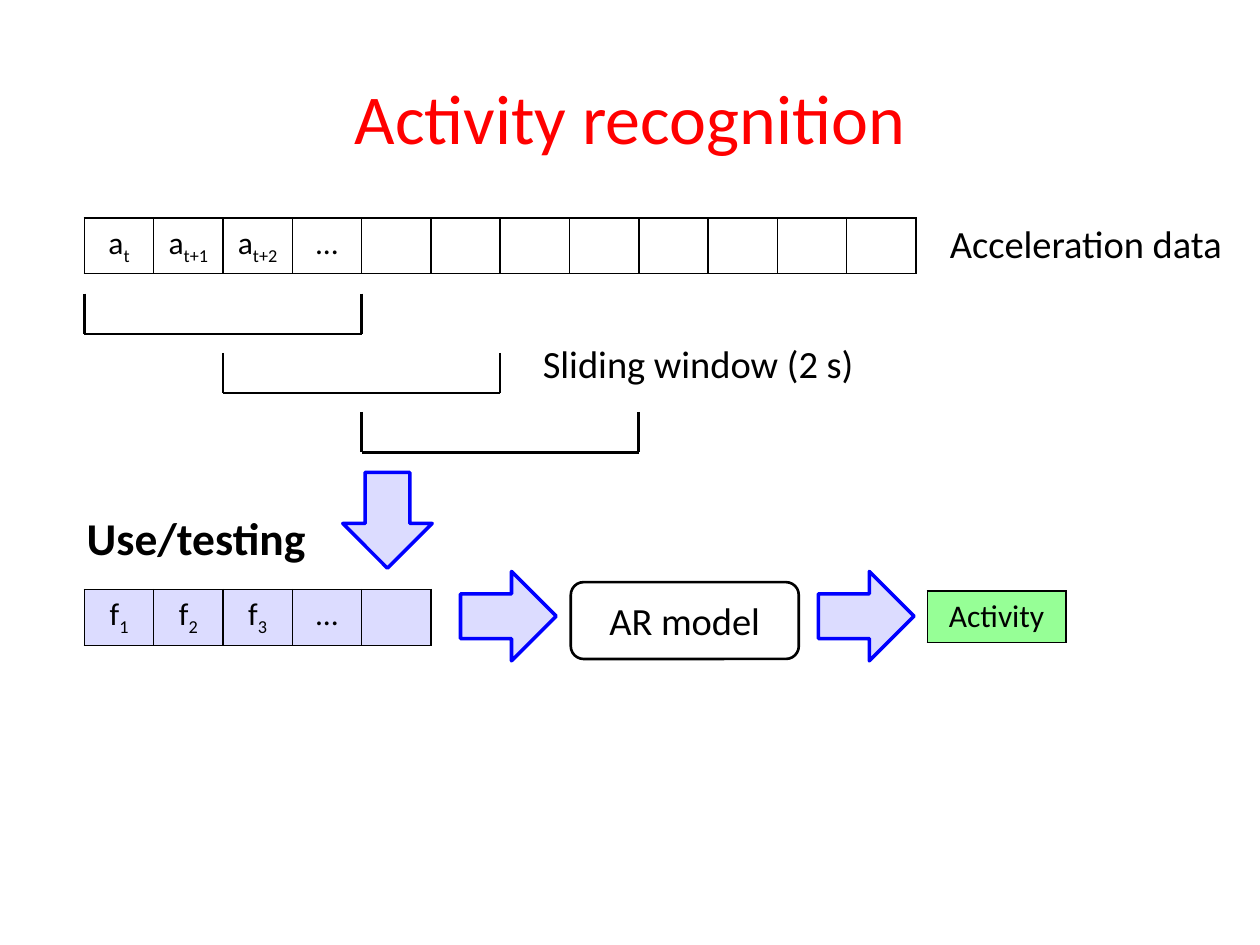
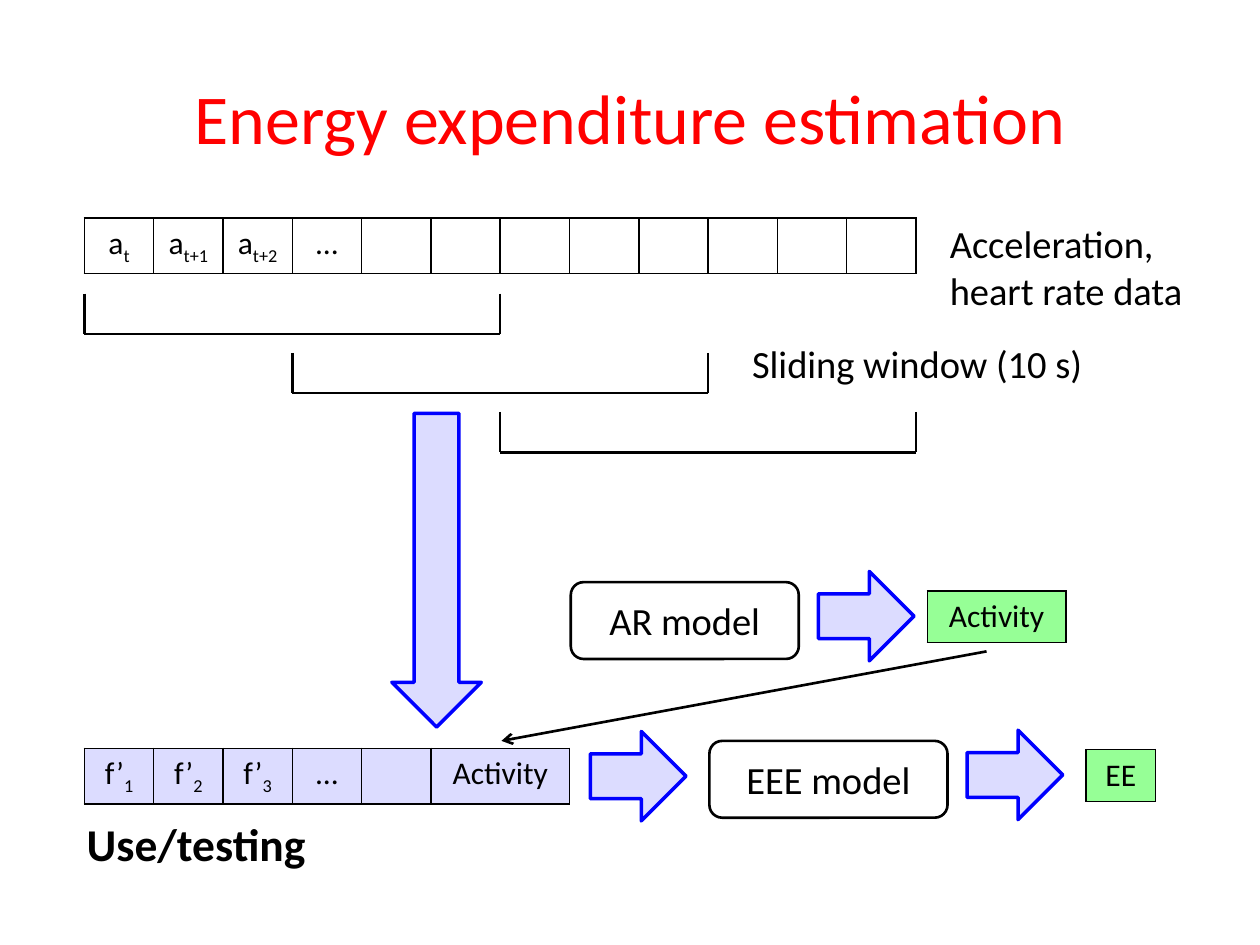
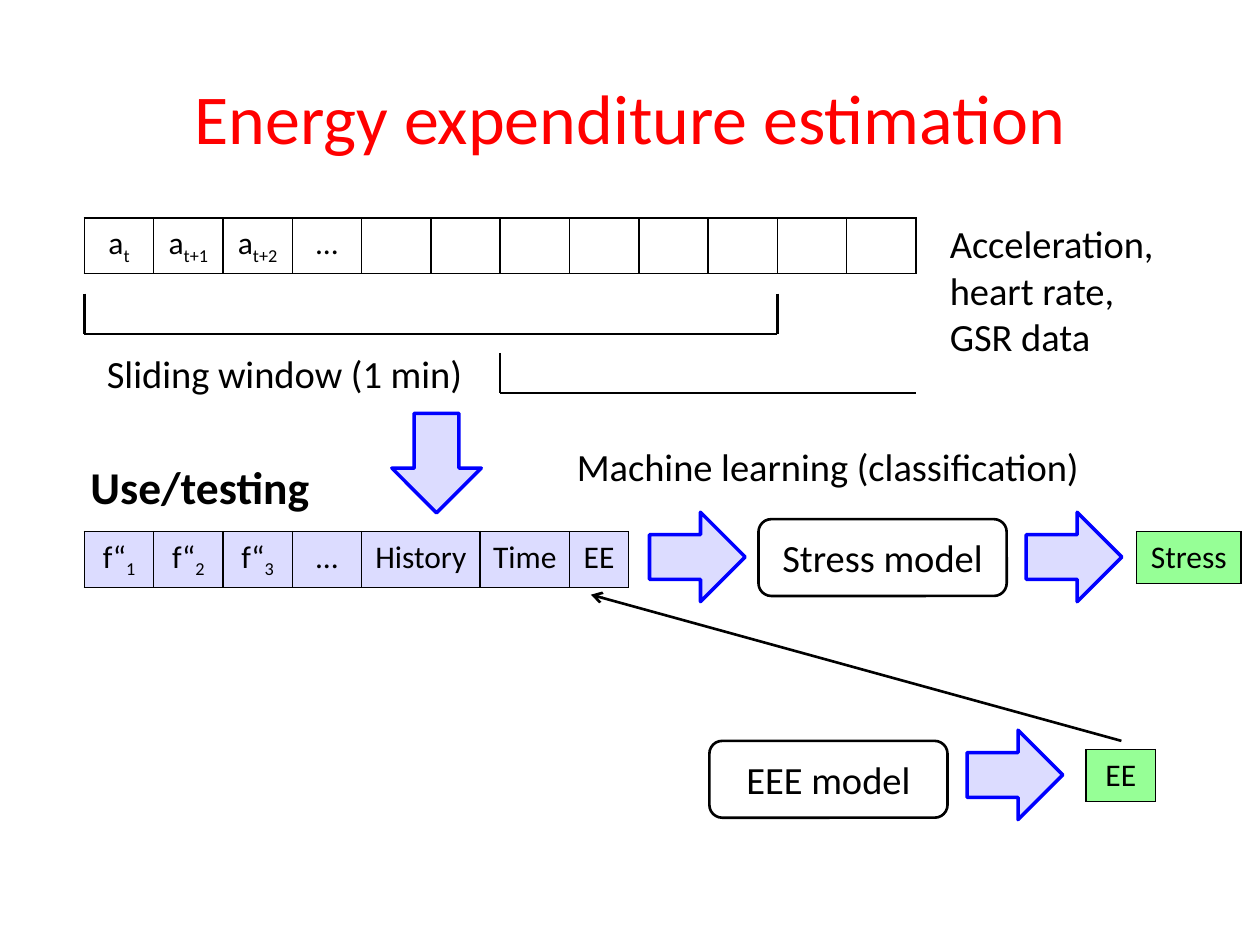
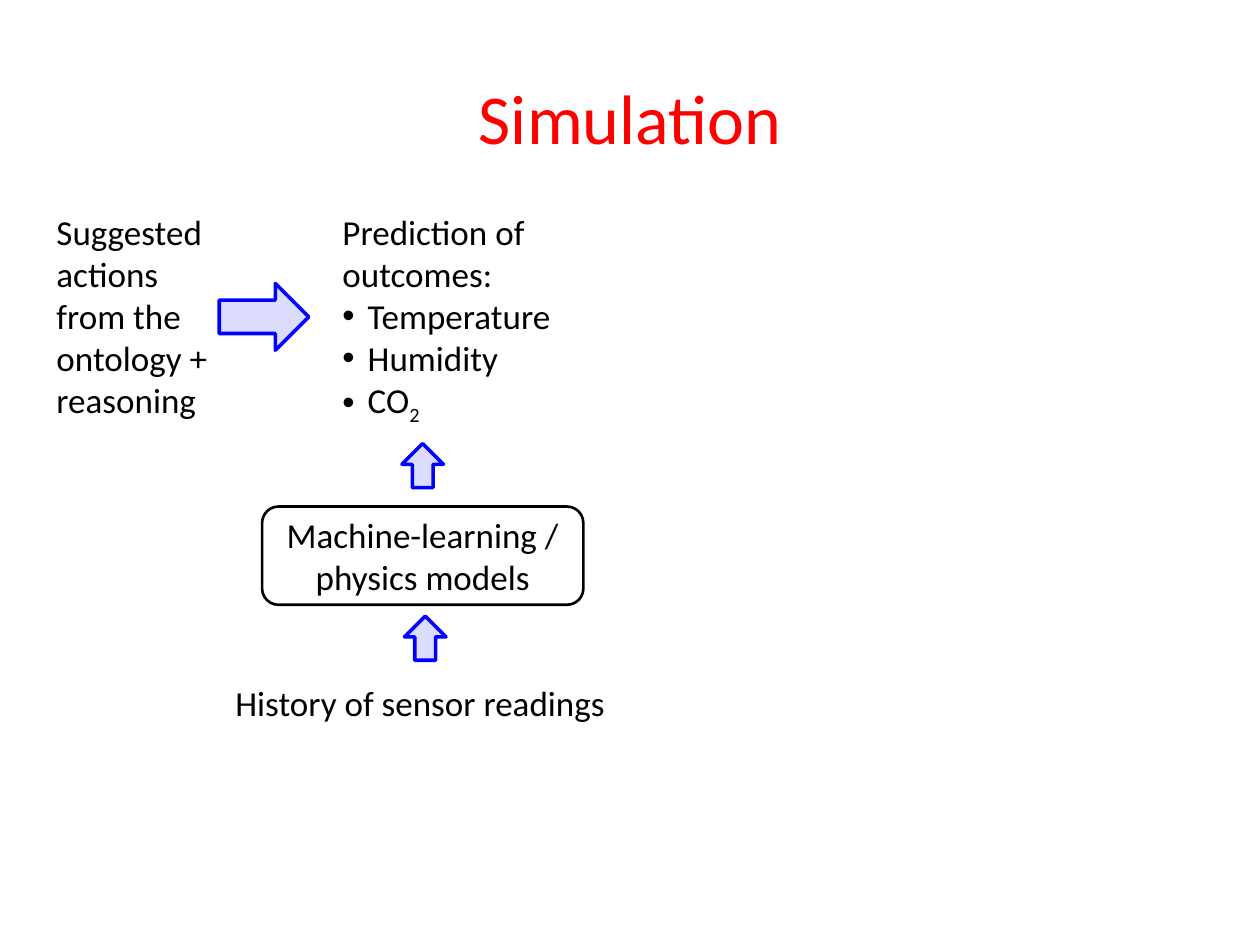
from lxml.etree import SubElement
from pptx import Presentation
from pptx.dml.color import RGBColor
from pptx.enum.shapes import MSO_CONNECTOR, MSO_SHAPE
from pptx.enum.text import MSO_ANCHOR, MSO_AUTO_SIZE, PP_ALIGN
from pptx.oxml.ns import qn
from pptx.util import Pt

# Shared look; 100 px to the inch
SCALE = 9144
FONT = "Calibri"
BLACK, RED, BLUE = "000000", "FF0000", "0000FF"
PALE, GREEN = "DCDCFF", "96FF96"
LEFT, CELL, HIGH = 67, 55, 41
TOP, STEP, DEPTH = 233, 47, 32
DOWN, RIGHT = MSO_SHAPE.DOWN_ARROW, MSO_SHAPE.RIGHT_ARROW

# Parts used on more than one slide.
# Text marks: "|" breaks a line, "_" starts a subscript, "• " a bullet.
# Table: x, y, cells, fill, widths of the last columns
DATA = (LEFT, 173, ["a_t", "a_t+1", "a_t+2", "..."] + [""] * 8, None, [])
ACT = (736, 469, ["Activity"], GREEN, [110])
ENERGY = (862, 595, ["EE"], GREEN, [])
# Model: text, box, size
AR = ("AR model", (453, 462, 181, 61), 22)
EEE = ("EEE model", (563, 588, 189, 61), 22)


def turned(x, y):
    return DOWN, (x, y, 71, 76), 270


# Content. Bracket: first column, last column, level, closed on the right
SLIDES = [
    dict(
        title="Activity recognition",
        tables=[DATA, (LEFT, 468, ["f_1", "f_2", "f_3", "...", ""], PALE, []),
                ACT],
        brackets=[(0, 4, 0, True), (2, 6, 1, True), (4, 8, 2, True)],
        arrows=[(DOWN, (272, 375, 71, 76), 0), turned(368, 451),
                turned(652, 451)],
        models=[AR],
        notes=[("Acceleration data", (744, 170, 238, 47), 22),
               ("Sliding window (2 s)", (421, 265, 269, 47), 22)],
        use=(59, 400),
    ),
    dict(
        title="Energy expenditure estimation",
        tables=[DATA,
                (LEFT, 594, ["f’_1", "f’_2", "f’_3", "...", "", "Activity"],
                 PALE, [110]),
                ACT, ENERGY],
        brackets=[(0, 6, 0, True), (3, 9, 1, True), (6, 12, 2, True)],
        arrows=[(DOWN, (311, 328, 71, 249), 0), turned(471, 578),
                turned(652, 451), turned(770, 577)],
        models=[EEE, AR],
        notes=[("Acceleration,|heart rate data", (744, 170, 207, 84), 22),
               ("Sliding window (10 s)", (587, 265, 285, 47), 22)],
        use=(59, 643),
        link=(783, 517, 398, 588),
    ),
    dict(
        title="Energy expenditure estimation",
        tables=[DATA, ENERGY,
                (LEFT, 422, ["f“_1", "f“_2", "f“_3", "...", "History", "Time",
                             "EE"], PALE, [94, 71, 47]),
                (902, 422, ["Stress"], GREEN, [83])],
        brackets=[(0, 10, 0, True), (6, 12, 1, False)],
        arrows=[turned(770, 577), turned(518, 404),
                (DOWN, (311, 328, 71, 79), 0), turned(817, 404)],
        models=[EEE, ("Stress model", (602, 412, 197, 61), 22)],
        notes=[("Acceleration,|heart rate,|GSR data",
                (744, 170, 184, 121), 22),
               ("Sliding window (1 min)", (75, 273, 305, 47), 22),
               ("Machine learning (classification)",
                (448, 347, 423, 47), 22)],
        use=(62, 359),
        link=(890, 588, 469, 472),
    ),
    dict(
        title="Simulation",
        arrows=[(RIGHT, (174, 225, 71, 53), 0),
                (RIGHT, (320, 490, 35, 33), 270),
                (RIGHT, (318, 353, 35, 33), 270)],
        models=[("Machine-learning / physics models",
                 (208, 402, 255, 78), 20)],
        notes=[(["Suggested|actions", "from the|ontology +|reasoning"],
                (35, 162, 143, 178), 20),
               (["Prediction of|outcomes:", "• Temperature", "• Humidity",
                 "• CO_2"], (262, 162, 190, 178), 20),
               ("History of sensor readings", (177, 536, 316, 44), 20)],
    ),
]


def emu(*sizes):
    return [round(size * SCALE) for size in sizes]


def paint(part, color):
    """Fill a fill or line format, or clear it."""
    if color:
        part.solid()
        part.fore_color.rgb = RGBColor.from_string(color)
    else:
        part.background()


def write(frame, text, size=22, color=BLACK, bold=False, align=PP_ALIGN.LEFT):
    lines = [text] if isinstance(text, str) else text
    for at, line in enumerate(lines):
        par = frame.add_paragraph() if at else frame.paragraphs[0]
        par.alignment = align
        if line.startswith("• "):
            line = line[2:]
            props = par._p.get_or_add_pPr()
            props.set("marL", str(20 * SCALE))
            props.set("indent", str(-20 * SCALE))
            SubElement(props, qn("a:buFont"), typeface="Arial")
            SubElement(props, qn("a:buChar"), char="•")
        for row, piece in enumerate(line.split("|")):
            if row:
                par.add_line_break()
            for low, word in enumerate(piece.split("_")):
                if not word:
                    continue
                run = par.add_run()
                run.text = word
                font = run.font
                font.name, font.size, font.bold = FONT, Pt(size), bold
                font.color.rgb = RGBColor.from_string(color)
                if low:
                    run._r.get_or_add_rPr().set("baseline", "-25000")


def note(slide, text, box, size, wrap=False, **look):
    frame = slide.shapes.add_textbox(*emu(*box)).text_frame
    frame.word_wrap = wrap
    frame.auto_size = MSO_AUTO_SIZE.SHAPE_TO_FIT_TEXT
    write(frame, text, size, **look)


def head(slide, text):
    frame = slide.shapes.add_textbox(*emu(50, 30, 900, 125)).text_frame
    frame.word_wrap = True
    frame.vertical_anchor = MSO_ANCHOR.MIDDLE
    write(frame, text, 40, color=RED, align=PP_ALIGN.CENTER)


def shape(slide, kind, box, fill, line, width):
    item = slide.shapes.add_shape(kind, *emu(*box))
    item.shadow.inherit = False
    paint(item.fill, fill)
    paint(item.line.fill, line)
    item.line.width = Pt(width)
    return item


def arrow(slide, kind, box, turn):
    shape(slide, kind, box, PALE, BLUE, 2).rotation = turn


def model(slide, text, box, size):
    item = shape(slide, MSO_SHAPE.ROUNDED_RECTANGLE, box, None, BLACK, 1.5)
    frame = item.text_frame
    frame.word_wrap = True
    frame.vertical_anchor = MSO_ANCHOR.MIDDLE
    write(frame, text, size, align=PP_ALIGN.CENTER)


def line(slide, *ends, tip=False):
    item = slide.shapes.add_connector(MSO_CONNECTOR.STRAIGHT, *emu(*ends))
    paint(item.line.fill, BLACK)
    item.line.width = Pt(1.5)
    if tip:
        SubElement(item.line._get_or_add_ln(), qn("a:tailEnd"), type="arrow")
    SubElement(item._element.spPr, qn("a:effectLst"))


def bracket(slide, first, last, level, closed):
    left, right = LEFT + CELL * first, LEFT + CELL * last
    top = TOP + STEP * level
    base = top + DEPTH
    for x in (left, right) if closed else (left,):
        line(slide, x, top, x, base)
    line(slide, right, base, left, base)


def border(cell):
    props = cell._tc.get_or_add_tcPr()
    for at, side in enumerate(("lnL", "lnR", "lnT", "lnB")):
        edge = props.makeelement(qn("a:" + side), {"w": "12700"})
        fill = SubElement(edge, qn("a:solidFill"))
        SubElement(fill, qn("a:srgbClr"), val=BLACK)
        props.insert(at, edge)


def table(slide, x, y, cells, fill, tail):
    wide = [CELL] * (len(cells) - len(tail)) + tail
    grid = slide.shapes.add_table(
        1, len(cells), *emu(x, y, sum(wide), HIGH)).table
    grid.first_row = grid.horz_banding = False
    for at, text in enumerate(cells):
        grid.columns[at].width = emu(wide[at])[0]
        cell = grid.cell(0, at)
        paint(cell.fill, fill)
        border(cell)
        write(cell.text_frame, text, 18, align=PP_ALIGN.CENTER)


def main():
    deck = Presentation()
    deck.slide_width, deck.slide_height = emu(1000, 750)
    for page in SLIDES:
        slide = deck.slides.add_slide(deck.slide_layouts[6])
        head(slide, page["title"])
        for key, draw in (("tables", table), ("brackets", bracket),
                          ("arrows", arrow), ("models", model),
                          ("notes", note)):
            for part in page.get(key, []):
                draw(slide, *part)
        if "use" in page:
            note(slide, "Use/testing", (*page["use"], 196, 54), 26, bold=True)
        if "link" in page:
            line(slide, *page["link"], tip=True)
    deck.save("out.pptx")


if __name__ == "__main__":
    main()
